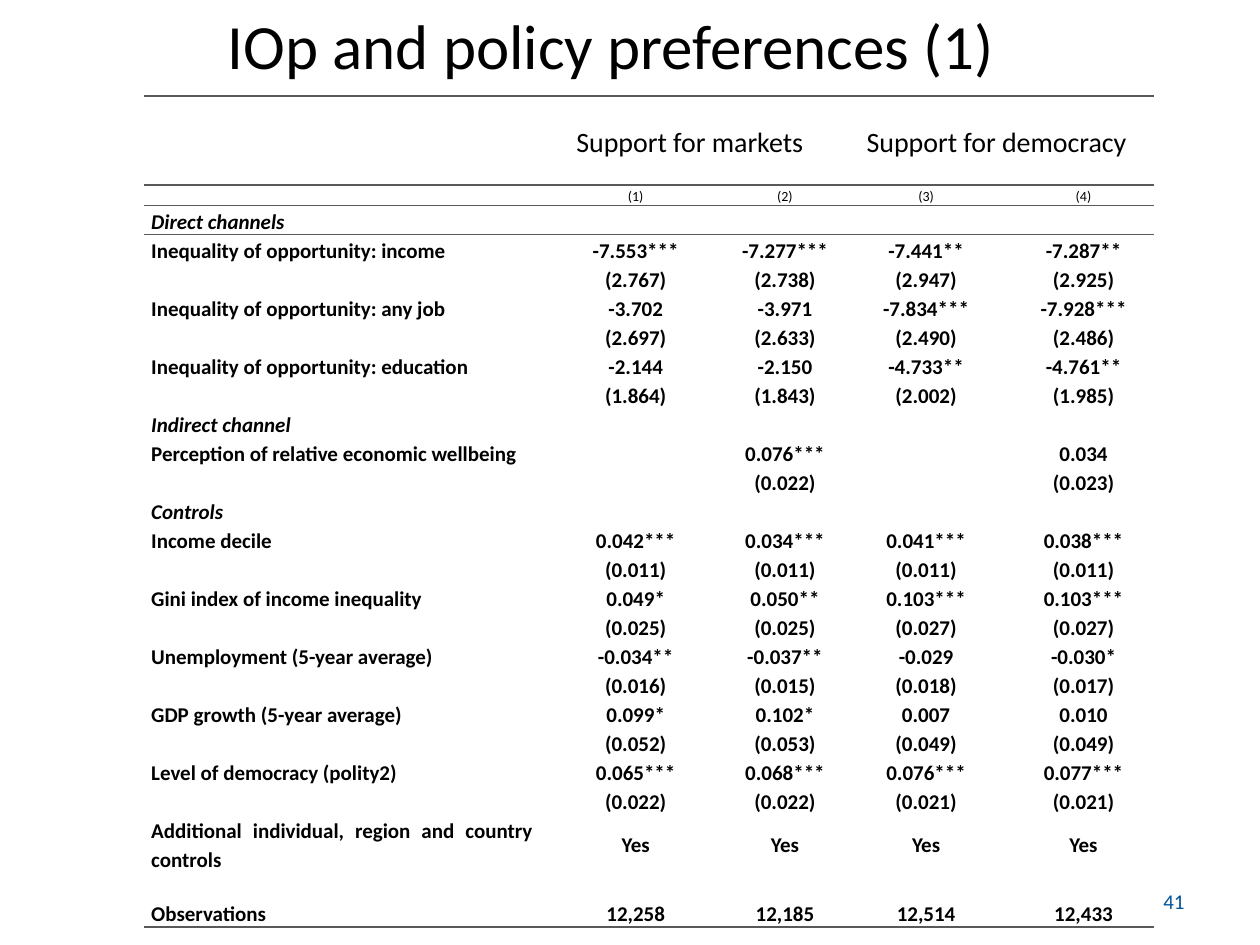
"""Build a slide with a regression table on policy preferences."""
from dataclasses import dataclass
from typing import Sequence

from lxml import etree
from pptx import Presentation
from pptx.dml.color import RGBColor
from pptx.enum import text
from pptx.oxml import ns
from pptx.util import Inches, Pt

ALIGN = text.PP_ALIGN
MIDDLE = text.MSO_ANCHOR.MIDDLE


@dataclass(frozen=True)
class Theme:
    """Colours, font and type sizes of the slide."""

    font: str = "Calibri"
    ink: str = "000000"
    accent: str = "00539B"
    rule: str = "58595B"
    title: int = 36
    heading: int = 16
    body: int = 12
    small: int = 8
    leading: float = 1.15
    thick: float = 1.5
    thin: float = 1


@dataclass(frozen=True)
class Line:
    """One table row: a label and a value for each model."""

    label: str = ""
    values: Sequence[str] = ("",) * 4
    height: float = 0.19
    size: int = 12
    bold: bool = True
    italic: bool = False
    align: ALIGN = ALIGN.LEFT
    top: float = 0
    bottom: float = 0


THEME = Theme()
NO_STYLE = "{2D5ABB26-0587-4C30-8999-92F81FD0307C}"
COLUMNS = (3.15, 1.51, 0.86, 1.38, 1.12)


def section(label: str, top: float = 0) -> Line:
    """Return a row that names a group of variables."""
    return Line(label, italic=True, top=top)


def estimate(label: str, values: str, errors: str, align: ALIGN = ALIGN.LEFT) -> list[Line]:
    """Return a coefficient row and its standard-error row; a dash is an empty cell."""
    coefficients = ["" if value == "–" else value for value in values.split()]
    deviations = ["" if error == "–" else f"({error})" for error in errors.split()]
    return [Line(label, coefficients, align=align), Line(values=deviations)]


LINES = [
    Line("", ("Support for markets", "", "Support for democracy", ""), 0.71, THEME.heading,
         bold=False, top=THEME.thick, bottom=THEME.thin),
    Line("", ("(1)", "(2)", "(3)", "(4)"), 0.16, THEME.small,
         bold=False, top=THEME.thin, bottom=THEME.thin),
    section("Direct channels", THEME.thin),
    *estimate("Inequality of opportunity: income",
              "-7.553*** -7.277*** -7.441** -7.287**", "2.767 2.738 2.947 2.925"),
    *estimate("Inequality of opportunity: any job",
              "-3.702 -3.971 -7.834*** -7.928***", "2.697 2.633 2.490 2.486"),
    *estimate("Inequality of opportunity: education",
              "-2.144 -2.150 -4.733** -4.761**", "1.864 1.843 2.002 1.985"),
    section("Indirect channel"),
    *estimate("Perception of relative economic wellbeing",
              "– 0.076*** – 0.034", "– 0.022 – 0.023"),
    section("Controls"),
    *estimate("Income decile",
              "0.042*** 0.034*** 0.041*** 0.038***", "0.011 0.011 0.011 0.011"),
    *estimate("Gini index of income inequality",
              "0.049* 0.050** 0.103*** 0.103***", "0.025 0.025 0.027 0.027"),
    *estimate("Unemployment (5-year average)",
              "-0.034** -0.037** -0.029 -0.030*", "0.016 0.015 0.018 0.017", ALIGN.JUSTIFY),
    *estimate("GDP growth (5-year average)",
              "0.099* 0.102* 0.007 0.010", "0.052 0.053 0.049 0.049", ALIGN.JUSTIFY),
    *estimate("Level of democracy (polity2)",
              "0.065*** 0.068*** 0.076*** 0.077***", "0.022 0.022 0.021 0.021"),
    Line("Additional individual, region and country controls", ("Yes",) * 4, 0.38,
         align=ALIGN.JUSTIFY),
    Line(),
    Line("Observations", ("12,258", "12,185", "12,514", "12,433"),
         align=ALIGN.JUSTIFY, bottom=THEME.thick),
]


def write(para, words: str, size: int, align: ALIGN, colour: str = THEME.ink) -> None:
    """Put words in a paragraph and set its font."""
    if words:
        para.text = words
    para.alignment = align
    para.font.name = THEME.font
    para.font.size = Pt(size)
    para.font.color.rgb = RGBColor.from_string(colour)


def draw_rule(cell, tag: str, width: float) -> None:
    """Add a border of the given width to one side of a cell."""
    border = etree.Element(ns.qn(tag), w=str(Pt(width)))
    fill = etree.SubElement(border, ns.qn("a:solidFill"))
    etree.SubElement(fill, ns.qn("a:srgbClr"), val=THEME.rule)
    cell._tc.get_or_add_tcPr().insert(0, border)


def fill_cell(cell, words: str, line: Line, align: ALIGN) -> None:
    """Format one table cell and write its text."""
    cell.fill.background()
    cell.vertical_anchor = MIDDLE
    cell.margin_left = cell.margin_right = Inches(0.06)
    cell.margin_top = cell.margin_bottom = 0
    para = cell.text_frame.paragraphs[0]
    write(para, words, line.size, align)
    para.line_spacing = THEME.leading
    para.font.bold = line.bold
    para.font.italic = line.italic
    if not words:
        para._p.get_or_add_endParaRPr().set("sz", str(line.size * 100))
    for tag, width in (("a:lnB", line.bottom), ("a:lnT", line.top)):
        if width:
            draw_rule(cell, tag, width)


def draw_table(page, lines: Sequence[Line]) -> None:
    """Add the regression table."""
    frame = page.shapes.add_table(
        len(lines), len(COLUMNS), Inches(1.14), Inches(0.76),
        Inches(sum(COLUMNS)), Inches(sum(line.height for line in lines)))
    table = frame.table
    table.first_row = table.horz_banding = False
    table._tbl.tblPr.find(ns.qn("a:tableStyleId")).text = NO_STYLE
    for column, width in zip(table.columns, COLUMNS):
        column.width = Inches(width)
    for index, line in enumerate(lines):
        table.rows[index].height = Inches(line.height)
        fill_cell(table.cell(index, 0), line.label, line, line.align)
        for position, value in enumerate(line.values, 1):
            fill_cell(table.cell(index, position), value, line, ALIGN.CENTER)
    for start in (1, 3):
        table.cell(0, start).merge(table.cell(0, start + 1))


def draw_title(page, words: str) -> None:
    """Place and format the title placeholder."""
    title = page.shapes.title
    title.left, title.top = Inches(0.35), Inches(-0.27)
    title.width, title.height = Inches(9), Inches(1.25)
    title.text_frame.vertical_anchor = MIDDLE
    write(title.text_frame.paragraphs[0], words, THEME.title, ALIGN.CENTER)


def draw_page_number(page, words: str) -> None:
    """Add the page number at the lower right."""
    box = page.shapes.add_textbox(Inches(7.17), Inches(6.95), Inches(2.33), Inches(0.4))
    box.text_frame.word_wrap = True
    box.text_frame.vertical_anchor = MIDDLE
    write(box.text_frame.paragraphs[0], words, THEME.body, ALIGN.RIGHT, THEME.accent)


def main() -> None:
    """Build and save the deck."""
    deck = Presentation()
    deck.slide_width, deck.slide_height = Inches(10), Inches(7.5)
    page = deck.slides.add_slide(deck.slide_layouts[5])
    draw_title(page, "IOp and policy preferences (1)")
    draw_page_number(page, "41")
    draw_table(page, LINES)
    deck.save("out.pptx")


if __name__ == "__main__":
    main()
